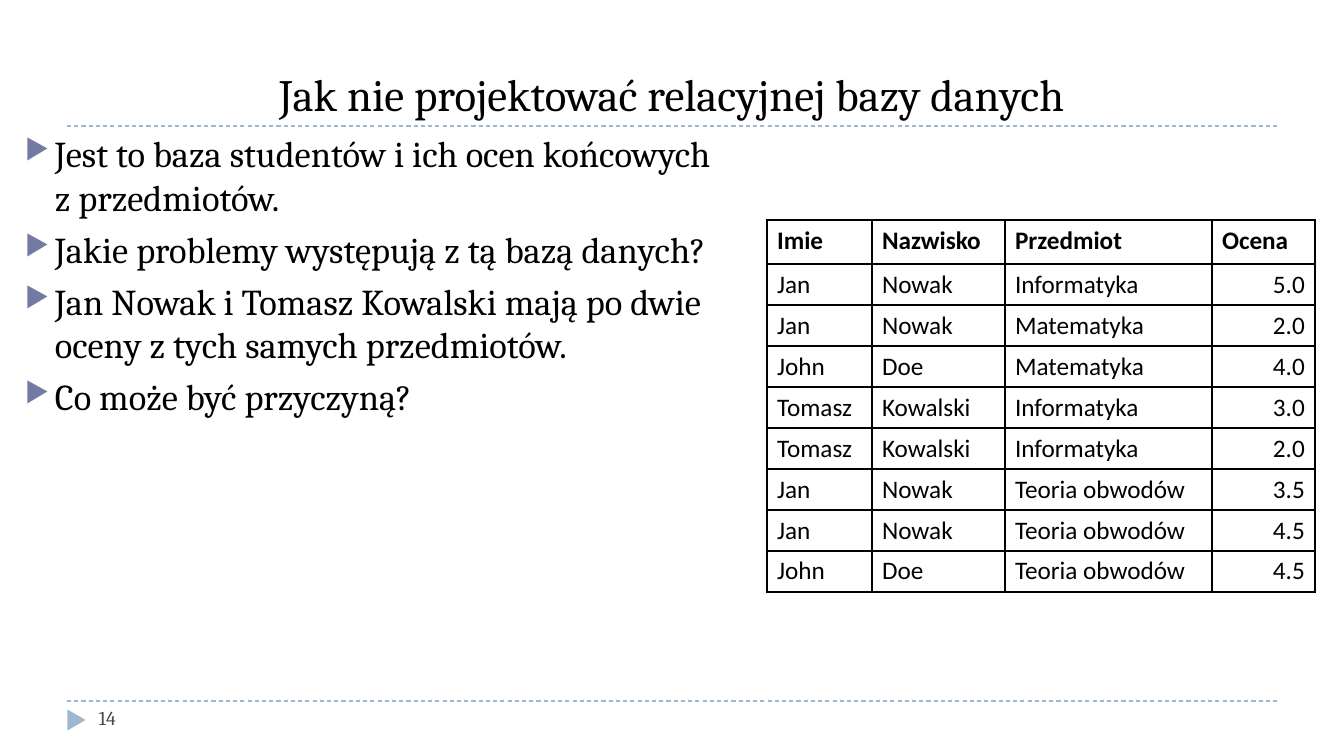
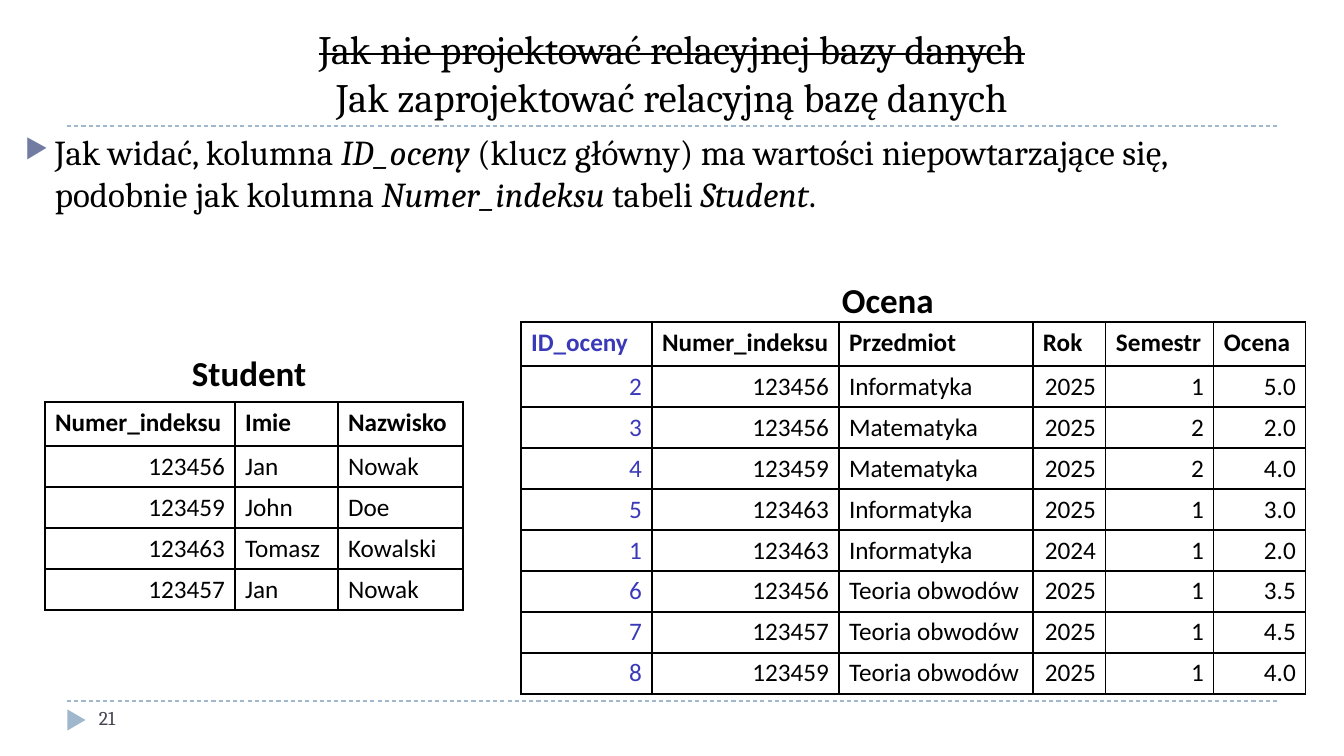
from lxml import etree
from pptx import Presentation
from pptx import util as u
from pptx.dml.color import RGBColor
from pptx.enum import dml, shapes, text
from pptx.oxml import ns

PX = 914400 / 100.8  # EMU in one px
ROW, HEADER_ROW = 41, 44
BREAK = "\n"


def px(n):
    return u.Emu(round(n * PX))


def rgb(value):
    return RGBColor.from_string(value)


def add_xml(parent, tag, **attrs):
    return etree.SubElement(parent, ns.qn(tag), attrs)


class Deck:
    SERIF, SANS = "Cambria", "Calibri"
    BLACK, GREY, RULE = "000000", "464653", "9FB8CD"
    BULLET, KEY = "727CA3", "3A3AB9"

    def __init__(self):
        self.prs = Presentation()
        self.prs.slide_width, self.prs.slide_height = px(1344), px(756)
        self.s = None

    # Shared frame: title, rules, page marker and number
    def slide(self, title, number, size):
        self.s = self.prs.slides.add_slide(self.prs.slide_layouts[5])
        for y in (126, 701):
            self.rule(67, 1277, y)
        self.marker(66, 711, 21, 18)
        self.title(title, size)
        self.label(str(number), (89, 701, 291, 40), 14, self.SERIF, self.GREY)

    def rule(self, x1, x2, y):
        line = self.s.shapes.add_connector(
            shapes.MSO_CONNECTOR.STRAIGHT, px(x1), px(y), px(x2), px(y))
        line.line.color.rgb = rgb(self.RULE)
        line.line.width = u.Pt(0.75)
        line.line.dash_style = dml.MSO_LINE.DASH
        add_xml(line._element.spPr, "a:effectLst")

    def marker(self, x, y, w, h):
        sp = self.s.shapes.add_shape(
            shapes.MSO_SHAPE.ISOSCELES_TRIANGLE, px(x), px(y), px(w), px(h))
        sp.rotation = 90
        sp.shadow.inherit = False
        sp.fill.solid()
        sp.fill.fore_color.rgb = rgb(self.RULE)
        sp.line.fill.background()

    def title(self, parts, size):
        sp = self.s.shapes.title
        sp.left, sp.top, sp.width, sp.height = map(px, (67, 17, 1210, 109))
        tf = sp.text_frame
        tf.auto_size = text.MSO_AUTO_SIZE.NONE
        tf.vertical_anchor = text.MSO_ANCHOR.BOTTOM
        p = tf.paragraphs[0]
        p.alignment = text.PP_ALIGN.CENTER
        self.add_runs(p, parts, size)

    # Text
    def add_runs(self, p, parts, size, font=SERIF, color=BLACK, bold=False):
        """Each part is a string, BREAK, or a (string, style) pair."""
        for part in parts:
            if part == BREAK:
                p.add_line_break()
                continue
            words, style = (part, None) if isinstance(part, str) else part
            r = p.add_run()
            r.text = words
            r.font.name, r.font.size = font, u.Pt(size)
            r.font.color.rgb = rgb(color)
            r.font.bold = bold
            r.font.italic = style == "italic"
            if style == "strike":
                r._r.get_or_add_rPr().set("strike", "sngStrike")

    def box(self, frame):
        tf = self.s.shapes.add_textbox(*map(px, frame)).text_frame
        tf.word_wrap = True
        return tf

    def label(self, words, frame, size, font, color=BLACK, bold=False):
        p = self.box(frame).paragraphs[0]
        self.add_runs(p, [words], size, font, color, bold)

    def bullets(self, items, frame, size):
        tf = self.box(frame)
        for i, parts in enumerate(items):
            p = tf.add_paragraph() if i else tf.paragraphs[0]
            pPr = p._p.get_or_add_pPr()
            pPr.set("marL", str(px(30)))
            pPr.set("indent", str(px(-30)))
            add_xml(add_xml(pPr, "a:buClr"), "a:srgbClr", val=self.BULLET)
            add_xml(pPr, "a:buSzPct", val="76000")
            add_xml(pPr, "a:buChar", char="▶")
            if i:
                p.space_before = u.Pt(6)
            self.add_runs(p, parts, size)

    # Tables: numbers go right, a key column gets its own colour
    def table(self, x, y, widths, rows, key=None):
        height = HEADER_ROW + ROW * (len(rows) - 1)
        table = self.s.shapes.add_table(
            len(rows), len(widths), px(x), px(y), px(sum(widths)), px(height)).table
        table.first_row = table.horz_banding = False
        for column, width in zip(table.columns, widths):
            column.width = px(width)
        for i, row in enumerate(rows):
            table.rows[i].height = px(ROW if i else HEADER_ROW)
            for j, value in enumerate(row):
                cell = table.cell(i, j)
                self.borders(cell)
                cell.fill.background()
                p = cell.text_frame.paragraphs[0]
                if value[0].isdigit():
                    p.alignment = text.PP_ALIGN.RIGHT
                color = self.KEY if j == key else self.BLACK
                self.add_runs(p, [value], 18, self.SANS, color, bold=i == 0)

    def borders(self, cell):
        tcPr = cell._tc.get_or_add_tcPr()
        for side in "LRTB":
            ln = add_xml(tcPr, f"a:ln{side}", w=str(u.Pt(1)))
            add_xml(add_xml(ln, "a:solidFill"), "a:srgbClr", val=self.BLACK)


def main():
    deck = Deck()

    # Flat table with its problems
    deck.slide(["Jak nie projektować relacyjnej bazy danych"], 14, 32)
    deck.table(767, 220, (105, 133, 207, 103), [
        ("Imie", "Nazwisko", "Przedmiot", "Ocena"),
        ("Jan", "Nowak", "Informatyka", "5.0"),
        ("Jan", "Nowak", "Matematyka", "2.0"),
        ("John", "Doe", "Matematyka", "4.0"),
        ("Tomasz", "Kowalski", "Informatyka", "3.0"),
        ("Tomasz", "Kowalski", "Informatyka", "2.0"),
        ("Jan", "Nowak", "Teoria obwodów", "3.5"),
        ("Jan", "Nowak", "Teoria obwodów", "4.5"),
        ("John", "Doe", "Teoria obwodów", "4.5"),
    ])
    deck.bullets([
        ["Jest to baza studentów i ich ocen końcowych", BREAK, "z przedmiotów."],
        ["Jakie problemy występują z tą bazą danych?"],
        ["Jan Nowak i Tomasz Kowalski mają po dwie oceny z tych samych przedmiotów."],
        ["Co może być przyczyną?"],
    ], (15, 126, 744, 570), 26)

    # Two related tables
    deck.slide([("Jak nie projektować relacyjnej bazy danych", "strike"), BREAK,
                "Jak zaprojektować relacyjną bazę danych"], 21, 28.8)
    deck.bullets([[
        "Jak widać, kolumna ", ("ID_oceny", "italic"),
        " (klucz główny) ma wartości niepowtarzające się, podobnie jak kolumna ",
        ("Numer_indeksu", "italic"), " tabeli ", ("Student", "italic"), ".",
    ]], (15, 126, 1299, 180), 25)
    deck.table(521, 322, (131, 187, 194, 73, 108, 92), [
        ("ID_oceny", "Numer_indeksu", "Przedmiot", "Rok", "Semestr", "Ocena"),
        ("2", "123456", "Informatyka", "2025", "1", "5.0"),
        ("3", "123456", "Matematyka", "2025", "2", "2.0"),
        ("4", "123459", "Matematyka", "2025", "2", "4.0"),
        ("5", "123463", "Informatyka", "2025", "1", "3.0"),
        ("1", "123463", "Informatyka", "2024", "1", "2.0"),
        ("6", "123456", "Teoria obwodów", "2025", "1", "3.5"),
        ("7", "123457", "Teoria obwodów", "2025", "1", "4.5"),
        ("8", "123459", "Teoria obwodów", "2025", "1", "4.0"),
    ], key=0)
    deck.table(45, 402, (190, 103, 125), [
        ("Numer_indeksu", "Imie", "Nazwisko"),
        ("123456", "Jan", "Nowak"),
        ("123459", "John", "Doe"),
        ("123463", "Tomasz", "Kowalski"),
        ("123457", "Jan", "Nowak"),
    ])
    for name, x, y in (("Student", 182, 347), ("Ocena", 832, 274)):
        deck.label(name, (x, y, 143, 54), 25, deck.SANS, bold=True)

    deck.prs.save("out.pptx")


if __name__ == "__main__":
    main()
